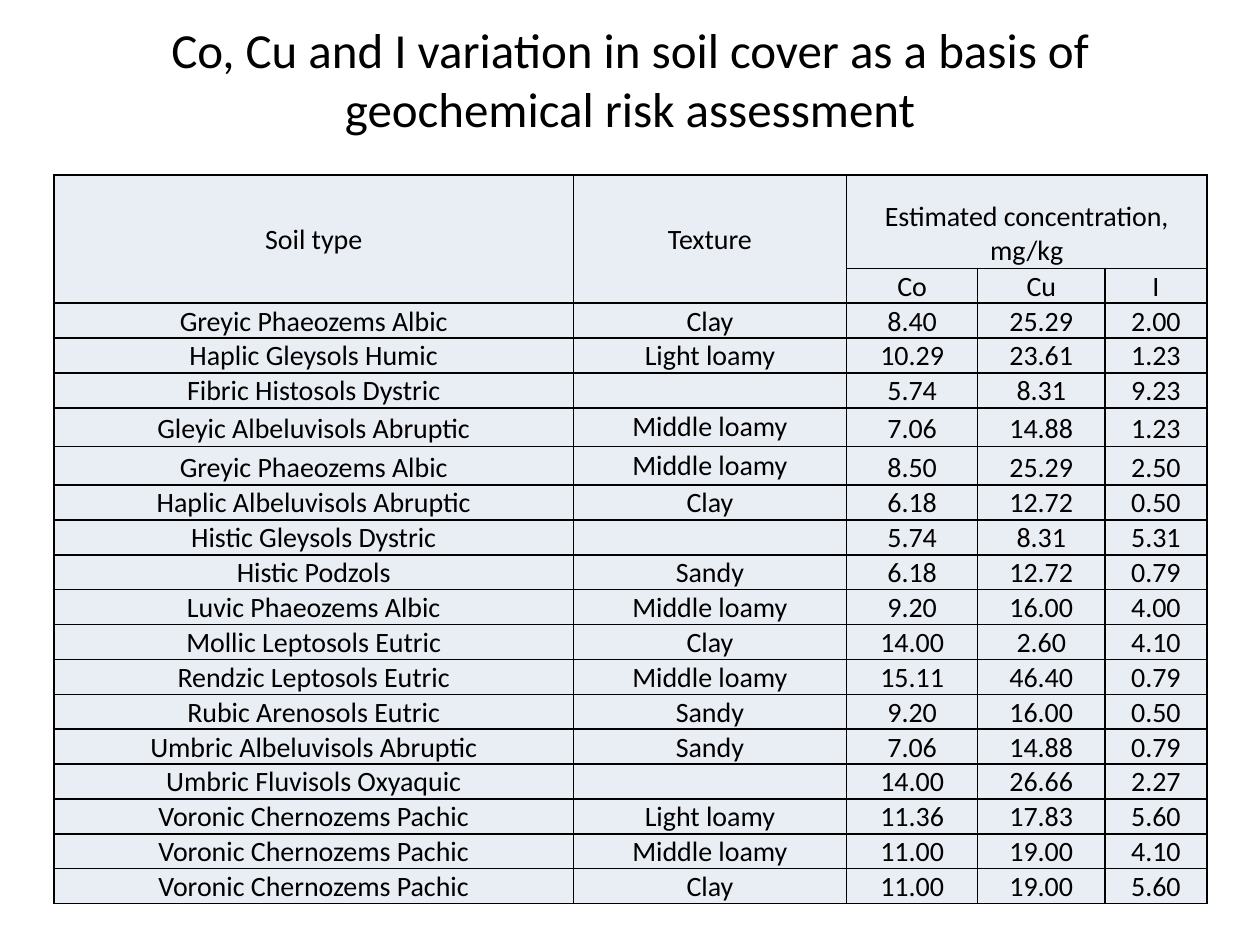
"""Build a slide with a table of cobalt, copper and iodine concentrations by soil type."""
from dataclasses import dataclass

from lxml.etree import SubElement
from pptx import Presentation
from pptx.dml.color import RGBColor
from pptx.enum.text import MSO_ANCHOR, PP_ALIGN
from pptx.oxml.ns import qn
from pptx.slide import Slide
from pptx.table import Table, _Cell
from pptx.util import Inches, Pt


@dataclass(frozen=True)
class Theme:
    font: str = "Calibri"
    ink: str = "000000"
    cell_fill: str = "E9EDF4"
    title_size: int = 28
    cell_size: int = 16
    border_width: int = 1


@dataclass(frozen=True)
class Soil:
    name: str
    texture: str
    cobalt: str
    copper: str
    iodine: str
    roomy: bool = False

    def values(self) -> tuple[str, ...]:
        return self.name, self.texture, self.cobalt, self.copper, self.iodine


THEME = Theme()
TITLE = "Co, Cu and I variation in soil cover as a basis of geochemical risk assessment"
COLUMN_WIDTHS = (4.12, 2.17, 1.04, 1.01, 0.81)
HEADER_HEIGHT, ROW_HEIGHT, ROOMY_HEIGHT = 0.74, 0.26, 0.29
CELL_MARGINS = {"margin_left": 0.01, "margin_top": 0.01, "margin_right": 0.01, "margin_bottom": 0}
ROOMY_MARGINS = CELL_MARGINS | {"margin_top": 0.02, "margin_bottom": 0.02}
HEADERS = (
    ("Soil type", "Texture", "Estimated concentration, mg/kg", "", ""),
    ("", "", "Co", "Cu", "I"),
)
SOILS = (
    Soil("Greyic Phaeozems Albic", "Сlay", "8.40", "25.29", "2.00"),
    Soil("Haplic Gleysols Humic", "Light loamy", "10.29", "23.61", "1.23"),
    Soil("Fibric Histosols Dystric", "", "5.74", "8.31", "9.23"),
    Soil("Gleyic Albeluvisols Abruptic", "Middle loamy", "7.06", "14.88", "1.23", roomy=True),
    Soil("Greyic Phaeozems Albic", "Middle loamy", "8.50", "25.29", "2.50", roomy=True),
    Soil("Haplic Albeluvisols Abruptic", "Сlay", "6.18", "12.72", "0.50"),
    Soil("Histic Gleysols Dystric", "", "5.74", "8.31", "5.31"),
    Soil("Histic Podzols", "Sandy", "6.18", "12.72", "0.79"),
    Soil("Luvic Phaeozems Albic", "Middle loamy", "9.20", "16.00", "4.00"),
    Soil("Mollic Leptosols Eutric", "Сlay", "14.00", "2.60", "4.10"),
    Soil("Rendzic Leptosols Eutric", "Middle loamy", "15.11", "46.40", "0.79"),
    Soil("Rubic Arenosols Eutric", "Sandy", "9.20", "16.00", "0.50"),
    Soil("Umbric Albeluvisols Abruptic", "Sandy", "7.06", "14.88", "0.79"),
    Soil("Umbric Fluvisols Oxyaquic", "", "14.00", "26.66", "2.27"),
    Soil("Voronic Chernozems Pachic", "Light loamy", "11.36", "17.83", "5.60"),
    Soil("Voronic Chernozems Pachic", "Middle loamy", "11.00", "19.00", "4.10"),
    Soil("Voronic Chernozems Pachic", "Сlay", "11.00", "19.00", "5.60"),
)


def write_text(text_frame, text: str, size: int) -> None:
    paragraph = text_frame.paragraphs[0]
    paragraph.alignment = PP_ALIGN.CENTER
    if not text:
        SubElement(paragraph._p, qn("a:endParaRPr"), sz=str(size * 100))
        return
    run = paragraph.add_run()
    run.text = text
    for name, value in {"name": THEME.font, "size": Pt(size)}.items():
        setattr(run.font, name, value)
    run.font.color.rgb = RGBColor.from_string(THEME.ink)


def draw_borders(cell: _Cell) -> None:
    properties = cell._tc.get_or_add_tcPr()
    for side in ("lnL", "lnR", "lnT", "lnB"):
        line = SubElement(properties, qn(f"a:{side}"), w=str(Pt(THEME.border_width)))
        SubElement(SubElement(line, qn("a:solidFill")), qn("a:srgbClr"), val=THEME.ink)


def format_cell(cell: _Cell, text: str, margins: dict[str, float]) -> None:
    write_text(cell.text_frame, text, THEME.cell_size)
    for name, inches in margins.items():
        setattr(cell, name, Inches(inches))
    cell.vertical_anchor = MSO_ANCHOR.BOTTOM
    draw_borders(cell)
    cell.fill.solid()
    cell.fill.fore_color.rgb = RGBColor.from_string(THEME.cell_fill)


def merge_headers(table: Table) -> None:
    for column in (0, 1):
        table.cell(0, column).merge(table.cell(1, column))
        table.cell(0, column).vertical_anchor = MSO_ANCHOR.MIDDLE
    table.cell(0, 2).merge(table.cell(0, 4))


def add_title(slide: Slide) -> None:
    title = slide.shapes.add_textbox(Inches(0.5), Inches(0), Inches(9), Inches(1.25))
    title.text_frame.word_wrap = True
    title.text_frame.vertical_anchor = MSO_ANCHOR.MIDDLE
    write_text(title.text_frame, TITLE, THEME.title_size)


def add_soil_table(slide: Slide) -> None:
    rows = HEADERS + tuple(soil.values() for soil in SOILS)
    heights = [HEADER_HEIGHT, ROW_HEIGHT]
    heights += [ROOMY_HEIGHT if soil.roomy else ROW_HEIGHT for soil in SOILS]
    frame = slide.shapes.add_table(
        len(rows), len(COLUMN_WIDTHS), Inches(0.43), Inches(1.39), Inches(9.15), Inches(5.74)
    )
    table = frame.table
    table.first_row = table.horz_banding = False
    for column, width in zip(table.columns, COLUMN_WIDTHS):
        column.width = Inches(width)
    for row, height, texts in zip(table.rows, heights, rows):
        row.height = Inches(height)
        for index, (cell, text) in enumerate(zip(row.cells, texts)):
            roomy = height == ROOMY_HEIGHT and index == 1
            format_cell(cell, text, ROOMY_MARGINS if roomy else CELL_MARGINS)
    merge_headers(table)
    frame.height = Inches(5.74)


def main() -> None:
    presentation = Presentation()
    presentation.slide_width, presentation.slide_height = Inches(10), Inches(7.5)
    slide = presentation.slides.add_slide(presentation.slide_layouts[6])
    add_title(slide)
    add_soil_table(slide)
    presentation.save("out.pptx")


if __name__ == "__main__":
    main()
